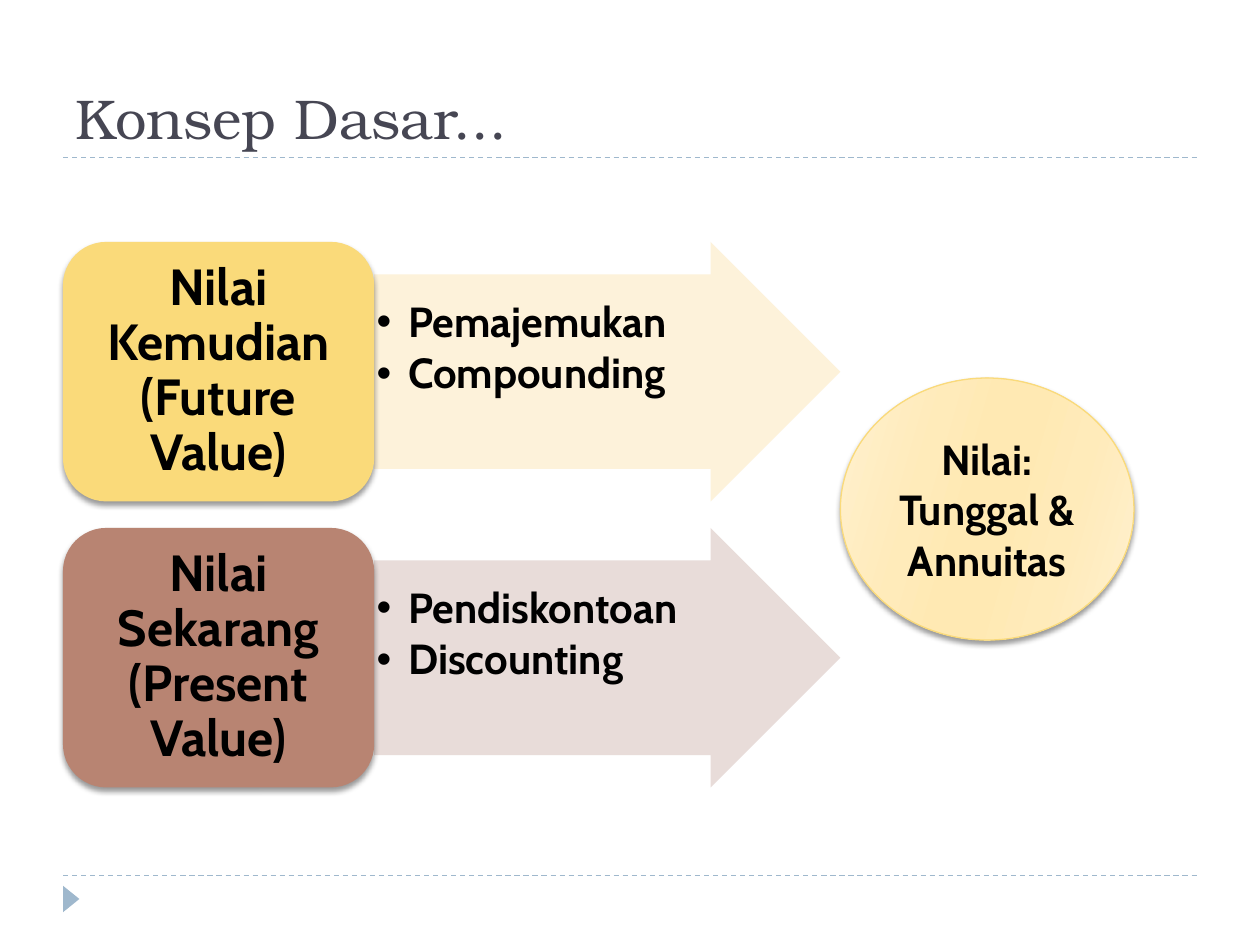
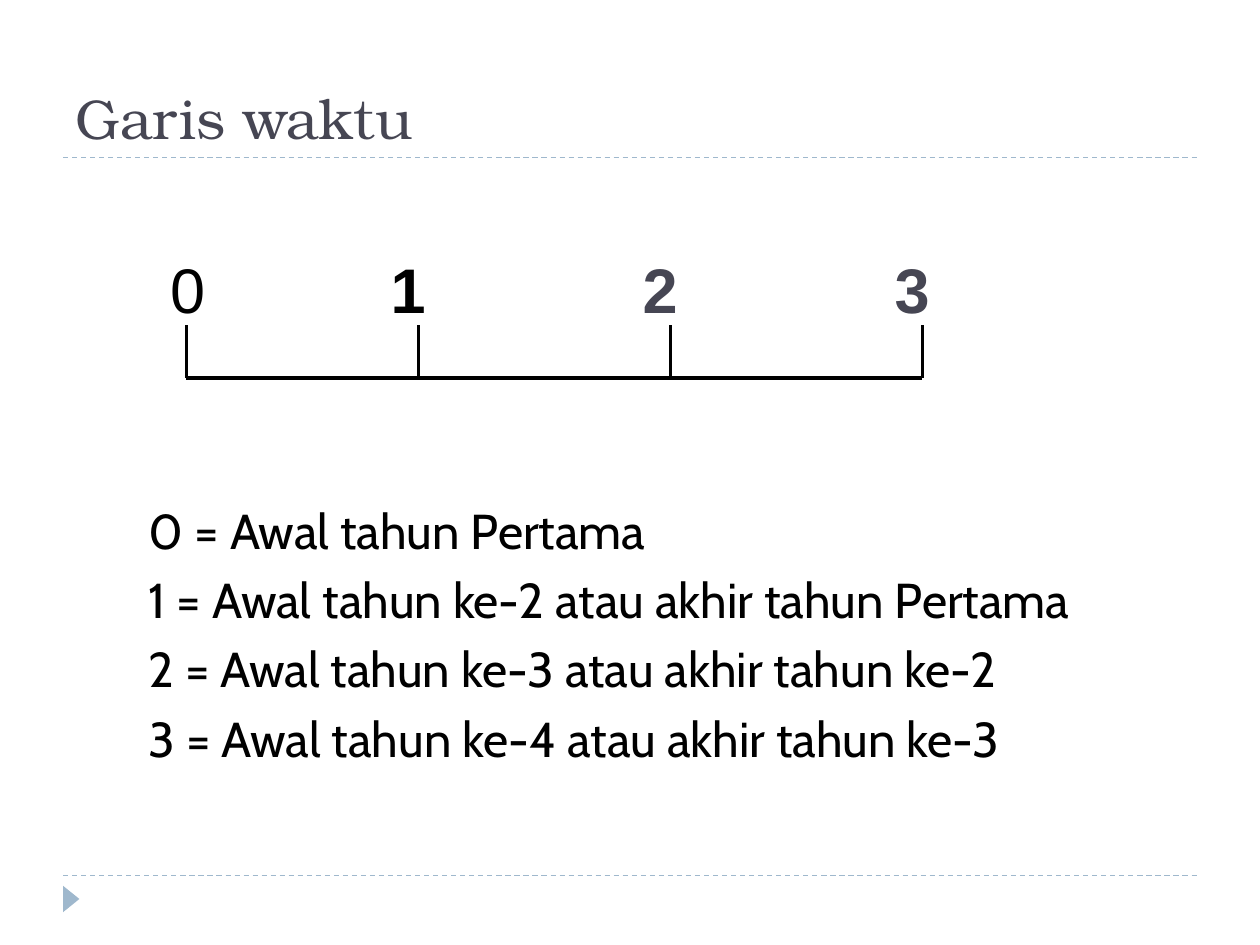
from dataclasses import dataclass

from lxml.etree import SubElement
from pptx import Presentation
from pptx.dml.color import RGBColor
from pptx.enum.dml import MSO_LINE_DASH_STYLE as Dash
from pptx.enum.shapes import MSO_CONNECTOR_TYPE as Connector, MSO_SHAPE as Shape
from pptx.enum.text import MSO_ANCHOR as Anchor, PP_ALIGN as Align
from pptx.oxml.ns import qn
from pptx.util import Inches, Pt


@dataclass(frozen=True)
class Theme:
    """Colours, fonts and type sizes that the slides share."""
    ink: str = "000000"
    slate: str = "464653"
    mist: str = "9FB8CD"
    gold: str = "FADA7A"
    gold_pale: str = "FDF1D7"
    clay: str = "B88472"
    clay_pale: str = "E6D9D5"
    glow: tuple = ((0, "FFF0CF"), (30, "FFEBBA"), (45, "FFE9B3"),
                   (55, "FFE9B3"), (73, "FFEBBA"), (100, "FFF0CF"))
    title_font: str = "TeX Gyre Bonum"
    body_font: str = "Cabin"
    number_font: str = "Arial"
    title_size: int = 32
    number_size: int = 36
    concept_size: int = 29
    legend_size: int = 28
    detail_size: int = 24


THEME = Theme()
LEFT, RIGHT = 0.5, 9.5


def rgb(colour):
    """Turn a hex string into a colour."""
    return RGBColor.from_string(colour)


def set_frame(box, insets=(0.1, 0.05, 0.1, 0.05), anchor=Anchor.TOP):
    """Wrap the text of a box and set its insets and anchor."""
    frame = box.text_frame
    frame.word_wrap = True
    frame.vertical_anchor = anchor
    (frame.margin_left, frame.margin_top,
     frame.margin_right, frame.margin_bottom) = map(Inches, insets)
    return frame


def add_span(para, text, font=THEME.body_font, size=THEME.detail_size,
             colour=THEME.ink, bold=False):
    """Add one formatted run to a paragraph."""
    span = para.add_run()
    span.text = text
    span.font.name = font
    span.font.size = Pt(size)
    span.font.bold = bold
    span.font.color.rgb = rgb(colour)


def write(frame, lines, align=Align.LEFT, spacing=1.0, before=0, after=0,
          bullet=False, **style):
    """Fill a frame with one paragraph for each line."""
    for index, line in enumerate(lines):
        para = frame.add_paragraph() if index else frame.paragraphs[0]
        para.alignment = align
        para.line_spacing = spacing
        para.space_before = Pt(before if index else 0)
        para.space_after = Pt(after)
        if bullet:
            add_bullet(para)
        add_span(para, line, **style)


def add_bullet(para, indent=0.25):
    """Give a paragraph a hanging round bullet."""
    props = para._p.get_or_add_pPr()
    props.set("marL", str(Inches(indent)))
    props.set("indent", str(-Inches(indent)))
    SubElement(props, qn("a:buFont"), typeface="Arial")
    SubElement(props, qn("a:buChar"), char="•")


def add_figure(page, kind, left, top, width, height, fill, opacity=100):
    """Add a flat preset shape without an outline."""
    figure = page.shapes.add_shape(kind, *map(Inches, (left, top, width, height)))
    figure.shadow.inherit = False
    figure.line.fill.background()
    figure.fill.solid()
    figure.fill.fore_color.rgb = rgb(fill)
    if opacity < 100:
        colour = figure._element.spPr.find(".//" + qn("a:srgbClr"))
        SubElement(colour, qn("a:alpha"), val=str(opacity * 1000))
    return figure


def add_shadow(figure):
    """Drop a soft shadow straight below a shape."""
    effects = figure._element.spPr.find(qn("a:effectLst"))
    shadow = SubElement(effects, qn("a:outerShdw"), blurRad=str(Pt(3)),
                        dist=str(Pt(2)), dir="5400000", rotWithShape="0")
    colour = SubElement(shadow, qn("a:srgbClr"), val=THEME.ink)
    SubElement(colour, qn("a:alpha"), val="40000")


def set_gradient(figure, stops, angle):
    """Fill a shape with a linear gradient, its angle counted clockwise."""
    figure.fill.gradient()
    figure.fill.gradient_angle = 360 - angle
    stop_list = figure._element.spPr.find(".//" + qn("a:gsLst"))
    stop_list.clear()
    for position, colour in stops:
        stop = SubElement(stop_list, qn("a:gs"), pos=str(position * 1000))
        SubElement(stop, qn("a:srgbClr"), val=colour)


def add_line(page, start, end, colour=THEME.ink, width=2, dash=None):
    """Draw a straight line between two points."""
    line = page.shapes.add_connector(Connector.STRAIGHT, *map(Inches, start + end))
    line.line.color.rgb = rgb(colour)
    line.line.width = Pt(width)
    if dash:
        line.line.dash_style = dash
    SubElement(line._element.spPr, qn("a:effectLst"))


def add_page(deck, title):
    """Add a slide with the shared rules, corner marker and title."""
    page = deck.slides.add_slide(deck.slide_layouts[5])
    for y in (6.95, 1.25):
        add_line(page, (LEFT, y), (RIGHT, y), THEME.mist, 0.75, Dash.DASH)
    marker = add_figure(page, Shape.ISOSCELES_TRIANGLE, 0.46, 7.07, 0.21, 0.13, THEME.mist)
    marker.rotation = 90
    box = page.shapes.title
    box.left, box.top, box.width, box.height = map(Inches, (LEFT, 0.17, RIGHT - LEFT, 1.08))
    write(set_frame(box, anchor=Anchor.BOTTOM), [title], font=THEME.title_font,
          size=THEME.title_size, colour=THEME.slate)
    return page


def add_concept(page, top, name, details, fill, pale):
    """Add a concept card and the arrow that lists its methods."""
    card_width, height = 2.47, 2.06
    arrow = add_figure(page, Shape.RIGHT_ARROW, LEFT + card_width, top, 3.7, height, pale, 90)
    arrow.adjustments[0], arrow.adjustments[1] = 0.75, 0.5
    write(set_frame(arrow, (0.02, 0.21, 0.02, 0.02)), details, spacing=0.9,
          after=3.6, bullet=True, bold=True)
    card = add_figure(page, Shape.ROUNDED_RECTANGLE, LEFT, top, card_width, height, fill)
    add_shadow(card)
    write(set_frame(card, (0.02, 0, 0.02, 0), Anchor.MIDDLE), [name], align=Align.CENTER,
          spacing=0.9, size=THEME.concept_size, bold=True)


def add_result(page, text):
    """Add the glowing ellipse that the arrows lead to."""
    ellipse = add_figure(page, Shape.OVAL, 6.67, 3, 2.33, 2.08, THEME.gold)
    set_gradient(ellipse, THEME.glow, 16)
    ellipse.line.color.rgb = rgb(THEME.gold)
    ellipse.line.width = Pt(0.75)
    add_shadow(ellipse)
    write(set_frame(ellipse, anchor=Anchor.MIDDLE), [text], align=Align.CENTER, bold=True)


def add_timeline(page):
    """Draw the axis, its ticks and the year numbers set on tab stops."""
    ticks = (1.48, 3.32, 5.32, 7.32)
    axis, tick_top = 3, 2.58
    add_line(page, (ticks[0], axis), (ticks[-1], axis))
    for x in ticks:
        add_line(page, (x, tick_top), (x, axis))
    box = page.shapes.add_textbox(*map(Inches, (1, 1.94, 6.54, 0.7)))
    para = set_frame(box, (0.35, 0.05, 0, 0.05)).paragraphs[0]
    tabs = SubElement(para._p.get_or_add_pPr(), qn("a:tabLst"))
    for step in range(3):
        SubElement(tabs, qn("a:tab"), pos=str(Inches(1.75 + 2 * step)), algn="l")
    style = {"font": THEME.number_font, "size": THEME.number_size}
    add_span(para, "0\t", **style)
    add_span(para, "1\t", bold=True, **style)
    add_span(para, "2\t3", bold=True, colour=THEME.slate, **style)


def add_legend(page, lines):
    """List the meaning of each year number."""
    box = page.shapes.add_textbox(*map(Inches, (1.08, 3.92, 8.25, 2.5)))
    write(set_frame(box), lines, before=6, size=THEME.legend_size)


def main():
    """Build both slides and save the deck."""
    deck = Presentation()
    deck.slide_width, deck.slide_height = Inches(10), Inches(7.5)

    page = add_page(deck, "Konsep Dasar...")
    add_concept(page, 1.92, "Nilai Kemudian (Future Value)",
                ["Pemajemukan", "Compounding"], THEME.gold, THEME.gold_pale)
    add_concept(page, 4.19, "Nilai Sekarang (Present Value)",
                ["Pendiskontoan", "Discounting"], THEME.clay, THEME.clay_pale)
    add_result(page, "Nilai: Tunggal & Annuitas")

    page = add_page(deck, "Garis waktu")
    add_timeline(page)
    add_legend(page, ["0 = Awal tahun Pertama",
                      "1 = Awal tahun ke-2 atau akhir tahun Pertama",
                      "2 = Awal tahun ke-3 atau akhir tahun ke-2",
                      "3 = Awal tahun ke-4 atau akhir tahun ke-3"])
    deck.save("out.pptx")


if __name__ == "__main__":
    main()
